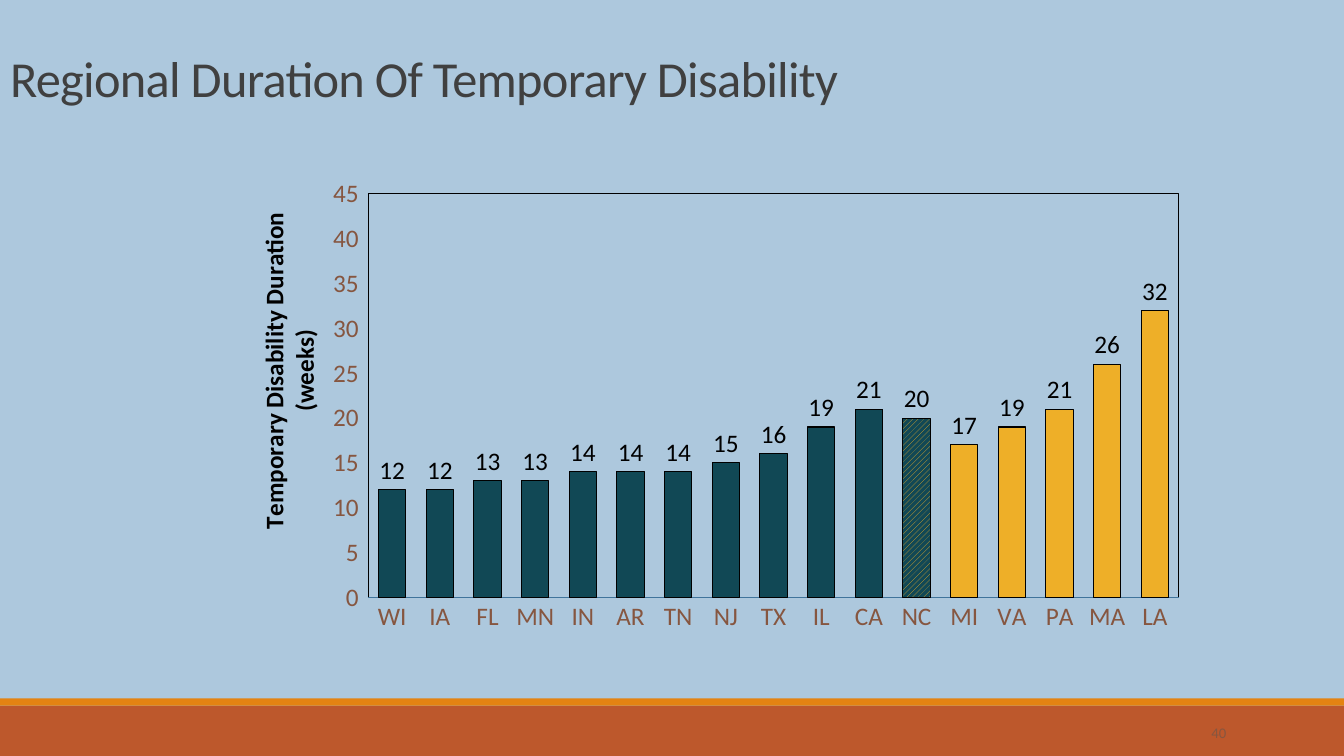
import pptx
import pptx.util
import pptx.chart.data
import pptx.dml.color
import pptx.enum.chart
import pptx.enum.dml
import pptx.enum.shapes
import pptx.enum.text
import pptx.oxml
import pptx.oxml.ns
from pptx.util import Inches

COLORS = {
    "background": "ADC8DD", "footer": "BD582C", "stripe": "E48312",
    "title": "404040", "number": "865640", "axis": "865640",
    "baseline": "40749B", "black": "000000", "teal": "114855", "gold": "EEAF28",
}
FONT = "Calibri"
DURATIONS = {
    "WI": 12, "IA": 12, "FL": 13, "MN": 13, "IN": 14, "AR": 14, "TN": 14,
    "NJ": 15, "TX": 16, "IL": 19, "CA": 21, "NC": 20, "MI": 17, "VA": 19,
    "PA": 21, "MA": 26, "LA": 32,
}
HATCHED = "NC"
GOLD_STATES = ("MI", "VA", "PA", "MA", "LA")


def rgb(name):
    return pptx.dml.color.RGBColor.from_string(COLORS[name])


def set_attrs(obj, values):
    for name, value in values.items():
        setattr(obj, name, value)


def set_font(font, size, color, bold=False):
    set_attrs(font, {"name": FONT, "size": pptx.util.Pt(size), "bold": bold})
    font.color.rgb = rgb(color)


def set_line(line, color):
    line.color.rgb = rgb(color)
    line.width = pptx.util.Pt(0.75)


def add_band(s, top, height, color):
    sp = s.shapes.add_shape(pptx.enum.shapes.MSO_SHAPE.RECTANGLE,
                            0, Inches(top), Inches(13.33), Inches(height))
    sp.shadow.inherit = False
    sp.fill.solid()
    sp.fill.fore_color.rgb = rgb(color)
    sp.line.fill.background()


def add_title(s, text):
    sp = s.shapes.title
    set_attrs(sp, {"left": 0, "top": Inches(0.48),
                   "width": Inches(8.78), "height": Inches(0.64)})
    tf = sp.text_frame
    set_attrs(tf, {"text": text, "word_wrap": True,
                   "auto_size": pptx.enum.text.MSO_AUTO_SIZE.NONE,
                   "vertical_anchor": pptx.enum.text.MSO_ANCHOR.BOTTOM})
    p = tf.paragraphs[0]
    set_attrs(p, {"alignment": pptx.enum.text.PP_ALIGN.LEFT, "line_spacing": 0.85})
    r = p.runs[0]
    set_font(r.font, 36, "title")
    r.font._element.set("spc", "-50")


def add_number(s, text):
    sp = s.shapes.add_textbox(Inches(11.26), Inches(7.07), Inches(1), Inches(0.4))
    tf = sp.text_frame
    set_attrs(tf, {"text": text, "word_wrap": True,
                   "vertical_anchor": pptx.enum.text.MSO_ANCHOR.MIDDLE})
    p = tf.paragraphs[0]
    p.alignment = pptx.enum.text.PP_ALIGN.RIGHT
    set_font(p.runs[0].font, 10.5, "number")


def set_layout(parent, index, values, inner=False):
    """Place a chart part by fractions of the chart's size."""
    for old in parent.findall(pptx.oxml.ns.qn("c:layout")):
        parent.remove(old)
    target = '<c:layoutTarget val="inner"/>' if inner else ""
    modes = "".join(f'<c:{k}Mode val="edge"/>' for k in ("x", "y"))
    places = "".join(f'<c:{k} val="{v}"/>' for k, v in values.items())
    parent.insert(index, pptx.oxml.parse_xml(
        f'<c:layout {pptx.oxml.ns.nsdecls("c")}><c:manualLayout>'
        f'{target}{modes}{places}</c:manualLayout></c:layout>'))


def format_axis(axis, line_color):
    tick = pptx.enum.chart.XL_TICK_MARK.NONE
    set_attrs(axis, {"major_tick_mark": tick, "minor_tick_mark": tick,
                     "has_major_gridlines": False})
    set_font(axis.tick_labels.font, 18, "axis")
    set_line(axis.format.line, line_color)


def format_value_axis(axis, title):
    format_axis(axis, "black")
    set_attrs(axis, {"minimum_scale": 0, "maximum_scale": 45, "major_unit": 5})
    set_attrs(axis.tick_labels, {"number_format": r"#,##0_);\(#,##0\)",
                                 "number_format_is_linked": False})
    tf = axis.axis_title.text_frame
    tf.text = title
    set_font(tf.paragraphs[0].runs[0].font, 18, "black", bold=True)
    set_layout(axis.axis_title._element, 1, {"x": 0.012, "y": 0.068})


def format_plot(plot):
    set_attrs(plot, {"gap_width": 75, "vary_by_categories": False,
                     "has_data_labels": True})
    labels = plot.data_labels
    set_attrs(labels, {"show_value": True, "number_format": "#,##0",
                       "number_format_is_linked": False,
                       "position": pptx.enum.chart.XL_LABEL_POSITION.OUTSIDE_END})
    set_font(labels.font, 18, "black")


def color_bars(series):
    series.format.fill.solid()
    series.format.fill.fore_color.rgb = rgb("teal")
    set_line(series.format.line, "black")
    for i, state in enumerate(DURATIONS):
        if state != HATCHED and state not in GOLD_STATES:
            continue
        point = series.points[i].format
        if state == HATCHED:
            point.fill.patterned()
            point.fill.pattern = pptx.enum.dml.MSO_PATTERN.WIDE_UPWARD_DIAGONAL
            point.fill.back_color.rgb = rgb("teal")
        else:
            point.fill.solid()
        point.fill.fore_color.rgb = rgb("gold")
        set_line(point.line, "black")


def add_duration_chart(s):
    data = pptx.chart.data.CategoryChartData()
    data.categories = list(DURATIONS)
    data.add_series("Series 1", list(DURATIONS.values()))
    chart = s.shapes.add_chart(
        pptx.enum.chart.XL_CHART_TYPE.COLUMN_CLUSTERED, Inches(2.38), Inches(1.72),
        Inches(9.58), Inches(5.07), data).chart
    set_attrs(chart, {"has_legend": False, "has_title": False})
    set_font(chart.font, 18, "black")
    format_axis(chart.category_axis, "baseline")
    format_value_axis(chart.value_axis, "Temporary Disability Duration (weeks)")
    format_plot(chart.plots[0])
    color_bars(chart.plots[0].series[0])

    # Plot position and frame
    area = chart._chartSpace.chart.plotArea
    set_layout(area, 0, {"x": 0.133, "y": 0.04, "w": 0.839, "h": 0.79}, inner=True)
    area.append(pptx.oxml.parse_xml(
        f'<c:spPr {pptx.oxml.ns.nsdecls("c", "a")}><a:noFill/><a:ln w="9525">'
        f'<a:solidFill><a:srgbClr val="{COLORS["black"]}"/></a:solidFill>'
        '</a:ln></c:spPr>'))


def main():
    prs = pptx.Presentation()
    set_attrs(prs, {"slide_width": Inches(13.33), "slide_height": Inches(7.5)})
    s = prs.slides.add_slide(prs.slide_layouts[5])
    s.background.fill.solid()
    s.background.fill.fore_color.rgb = rgb("background")

    # Footer bands
    add_band(s, 7, 0.5, "footer")
    add_band(s, 6.93, 0.07, "stripe")

    # Content
    add_title(s, "Regional Duration Of Temporary Disability")
    add_duration_chart(s)
    add_number(s, "40")
    prs.save("out.pptx")


if __name__ == "__main__":
    main()
